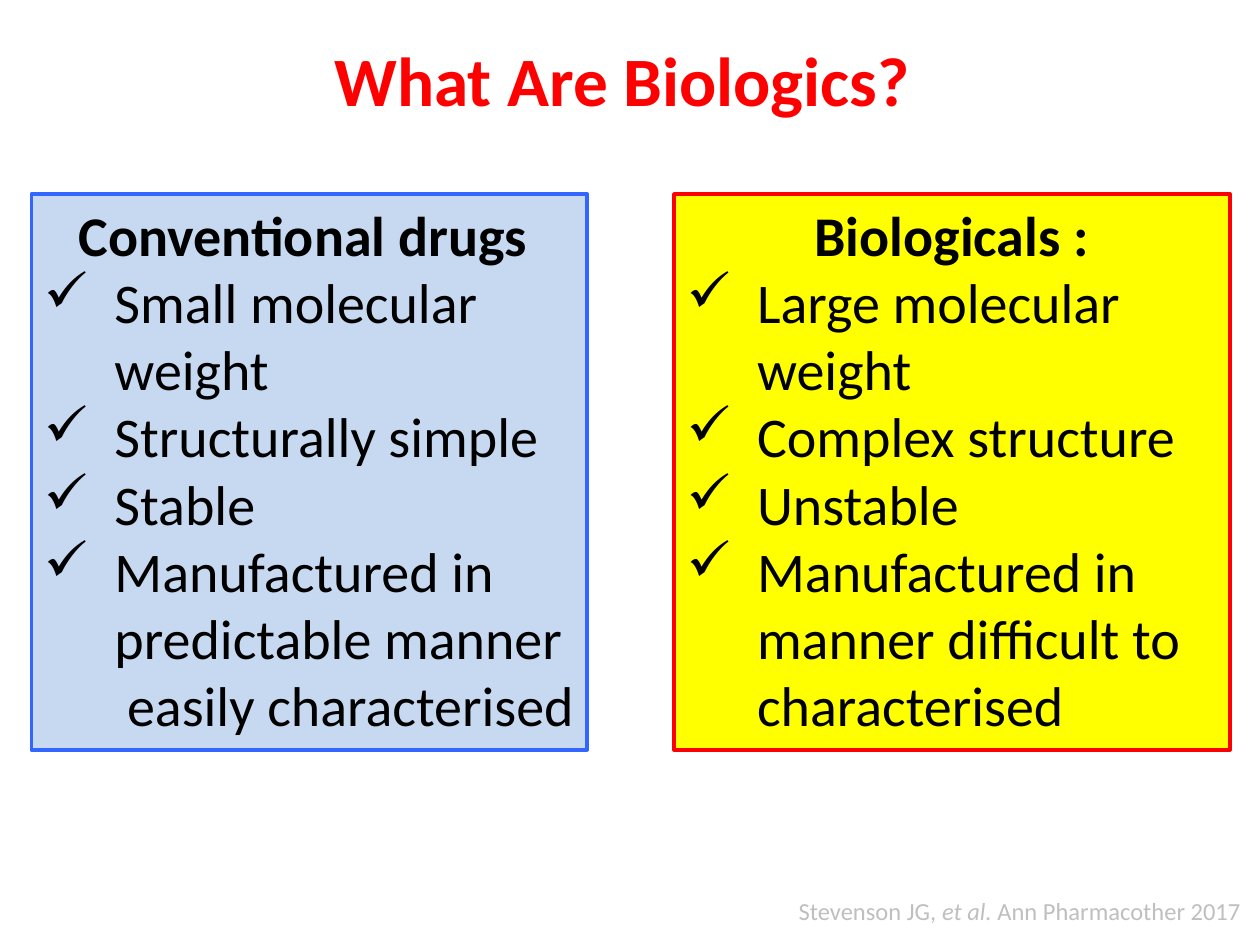
from pptx import Presentation
from pptx.dml.color import RGBColor
from pptx.enum.shapes import MSO_SHAPE
from pptx.enum.text import MSO_ANCHOR, PP_ALIGN
from pptx.oxml.ns import qn
from pptx.util import Inches, Pt
from lxml import etree

RECT = MSO_SHAPE.RECTANGLE
MIDDLE, TOP = MSO_ANCHOR.MIDDLE, MSO_ANCHOR.TOP
CENTER, LEFT = PP_ALIGN.CENTER, PP_ALIGN.LEFT

FONT = "Calibri"
TITLE = "What Are Biologics? "
PANELS = [
    ("Conventional drugs ", "C6D9F1", "3366FF", [
        "Small molecular weight",
        "Structurally simple",
        "Stable",
        "Manufactured in predictable manner\n easily characterised",
    ]),
    ("Biologicals :", "FFFF00", "FF0000", [
        "Large molecular weight",
        "Complex structure",
        "Unstable",
        "Manufactured in manner difficult to characterised",
    ]),
]
CITATION = [("Stevenson JG, ", False), ("et al. ", True),
            ("Ann Pharmacother 2017", False)]

PANEL_LEFT, PANEL_TOP, PANEL_SIZE, PANEL_STEP = 0.25, 1.54, 4.41, 5.1
INDENT = 0.56


def rgb(value):
    return RGBColor.from_string(value)


def add_run(p, text, size, color, bold=False, italic=False):
    r = p.add_run()
    r.text = text
    r.font.name = FONT
    r.font.size = Pt(size)
    r.font.color.rgb = rgb(color)
    r.font.bold = bold
    r.font.italic = italic


def add_check(p):
    pPr = p._p.get_or_add_pPr()
    pPr.set("marL", str(Inches(INDENT)))
    pPr.set("indent", str(-Inches(INDENT)))
    etree.SubElement(pPr, qn("a:buChar")).set("char", "✓")


def add_text_box(s, left, top, width, height, anchor):
    sp = s.shapes.add_textbox(*map(Inches, (left, top, width, height)))
    tf = sp.text_frame
    tf.word_wrap = True
    tf.vertical_anchor = anchor
    return tf.paragraphs[0]


def add_panel(s, left, heading, fill, line, points):
    sp = s.shapes.add_shape(RECT, Inches(left), Inches(PANEL_TOP),
                            Inches(PANEL_SIZE), Inches(PANEL_SIZE))
    sp.shadow.inherit = False
    sp.fill.solid()
    sp.fill.fore_color.rgb = rgb(fill)
    sp.line.color.rgb = rgb(line)
    sp.line.width = Pt(2.25)
    tf = sp.text_frame
    tf.word_wrap = True
    tf.vertical_anchor = TOP
    p = tf.paragraphs[0]
    p.alignment = CENTER
    add_run(p, heading, 32, "000000", bold=True)
    for point in points:
        p = tf.add_paragraph()
        p.alignment = LEFT
        add_check(p)
        for i, part in enumerate(point.split("\n")):
            if i:
                p.add_line_break()
            add_run(p, part, 32, "000000")


prs = Presentation()
prs.slide_width, prs.slide_height = Inches(10), Inches(7.5)
s = prs.slides.add_slide(prs.slide_layouts[6])

p = add_text_box(s, 0.5, 0.2, 9, 0.85, MIDDLE)
p.alignment = CENTER
add_run(p, TITLE, 39.6, "FF0000", bold=True)

for i, panel in enumerate(PANELS):
    add_panel(s, PANEL_LEFT + i * PANEL_STEP, *panel)

p = add_text_box(s, 6.24, 7.06, 3.76, 0.4, TOP)
for text, italic in CITATION:
    add_run(p, text, 14, "BFBFBF", italic=italic)

prs.save("out.pptx")
